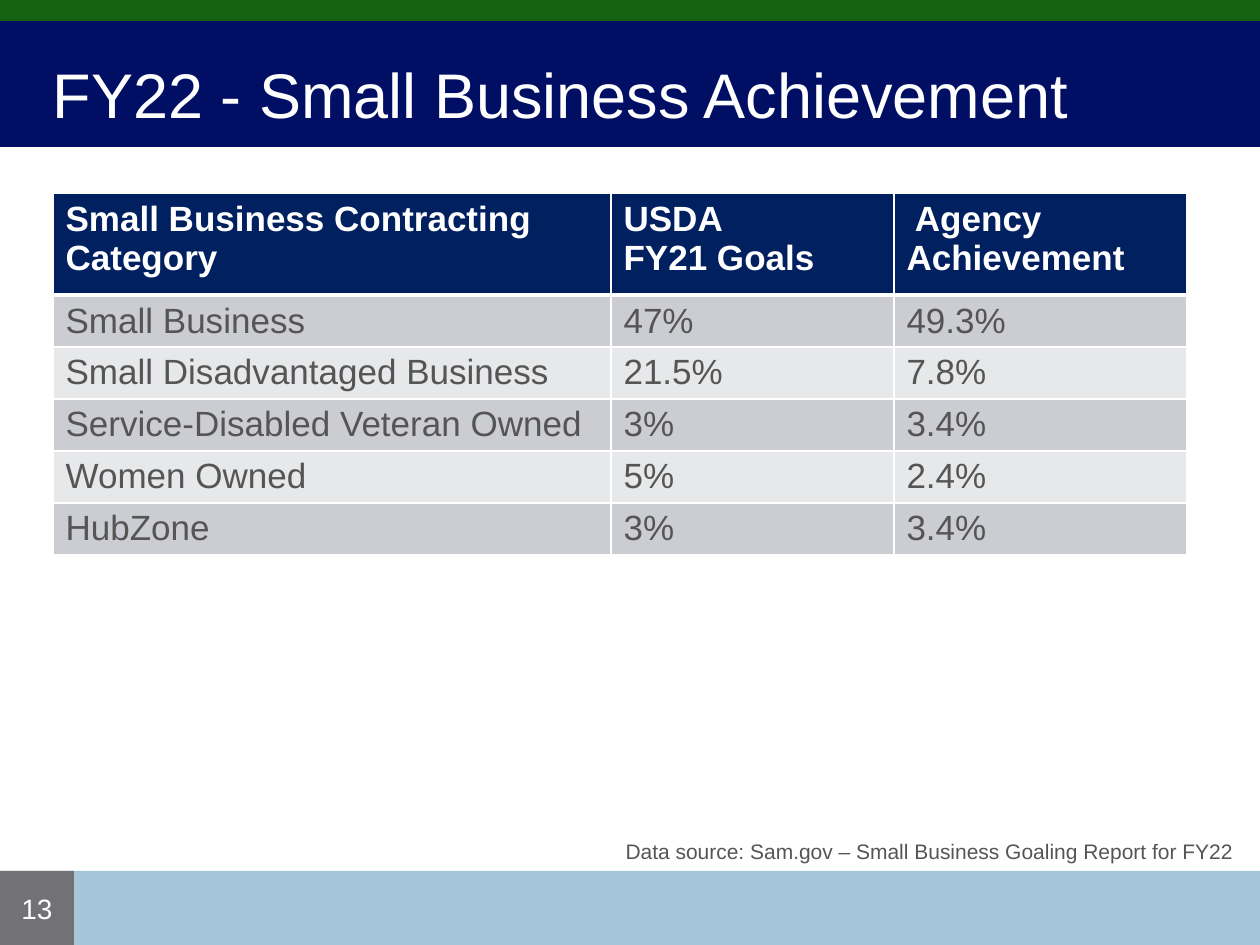
from lxml import etree
from pptx import Presentation, util as u
from pptx.dml.color import RGBColor
from pptx.enum import shapes, text
from pptx.oxml.ns import qn

# Content
TITLE = "FY22 - Small Business Achievement"
HEADER = ["Small Business Contracting Category", "USDA\nFY21 Goals", " Agency Achievement"]
ROWS = [
    ("Small Business", "47%", "49.3%"),
    ("Small Disadvantaged Business", "21.5%", "7.8%"),
    ("Service-Disabled Veteran Owned", "3%", "3.4%"),
    ("Women Owned", "5%", "2.4%"),
    ("HubZone", "3%", "3.4%"),
]
SOURCE = "Data source: Sam.gov – Small Business Goaling Report for FY22"
PAGE = "13"

# Style and layout, lengths in px
COLORS = {
    "navy": "000F64", "sky": "A5C5DA", "green": "156312", "gray": "727176",
    "header": "002060", "odd": "CCCDD2", "even": "E7E8EA",
    "white": "FFFFFF", "body": "555555", "source": "545555",
}
FONT = "Arial"
W, H = 1260, 945
FOOTER_H = 74
FOOTER_Y = H - FOOTER_H
BANDS = [
    ("navy", 0, 0, W, 147),
    ("sky", 0, FOOTER_Y, W, FOOTER_H),
    ("green", 0, 0, W, 21),
]
TABLE_X, TABLE_Y = 53, 193
COL_W = [558, 283, 293]
HEADER_H, ROW_H = 102, 52


def px(n):
    return u.Emu(round(n * 914400 / 126))


def box(*lengths):
    return [px(n) for n in lengths]


def rgb(name):
    return RGBColor.from_string(COLORS[name])


def style(tf, size, color, bold=False, align=None):
    for p in tf.paragraphs:
        p.alignment = align
        for r in p.runs:
            r.font.name, r.font.size, r.font.bold = FONT, u.Pt(size), bold
            r.font.color.rgb = rgb(color)


def add_rect(s, color, *lengths):
    sp = s.shapes.add_shape(shapes.MSO_SHAPE.RECTANGLE, *box(*lengths))
    sp.shadow.inherit = False
    sp.fill.solid()
    sp.fill.fore_color.rgb = rgb(color)
    sp.line.fill.background()
    return sp


def set_borders(cell, top, bottom):
    tcPr = cell._tc.get_or_add_tcPr()
    widths = {"lnL": 1, "lnR": 1, "lnT": top, "lnB": bottom}
    for i, (side, width) in enumerate(widths.items()):
        ln = etree.Element(qn("a:" + side), w=str(u.Pt(width)))
        fill = etree.SubElement(ln, qn("a:solidFill"))
        etree.SubElement(fill, qn("a:srgbClr"), val=COLORS["white"])
        tcPr.insert(i, ln)


prs = Presentation()
prs.slide_width, prs.slide_height = box(W, H)
s = prs.slides.add_slide(prs.slide_layouts[5])

# Bands
for band in BANDS:
    add_rect(s, *band)

# Title, brought in front of the bands
title = s.shapes.title
title.element.getparent().append(title.element)
title.left, title.top, title.width, title.height = box(TABLE_X, 30, 1144, 126)
tf = title.text_frame
tf.text = TITLE
tf.margin_left = tf.margin_right = 0
tf.vertical_anchor = text.MSO_ANCHOR.MIDDLE
style(tf, 36, "white", align=text.PP_ALIGN.LEFT)

# Table
data = [HEADER, *ROWS]
table = s.shapes.add_table(
    len(data), len(COL_W),
    *box(TABLE_X, TABLE_Y, sum(COL_W), HEADER_H + ROW_H * len(ROWS))).table
for col, width in zip(table.columns, COL_W):
    col.width = px(width)
for i, values in enumerate(data):
    table.rows[i].height = px(ROW_H if i else HEADER_H)
    fill = "header" if i == 0 else "odd" if i % 2 else "even"
    for j, value in enumerate(values):
        cell = table.cell(i, j)
        cell.text = value
        cell.fill.solid()
        cell.fill.fore_color.rgb = rgb(fill)
        set_borders(cell, top=3 if i == 1 else 1, bottom=1 if i else 3)
        style(cell.text_frame, 20, "body" if i else "white", bold=i == 0)

# Page number
sp = add_rect(s, "gray", 0, FOOTER_Y, FOOTER_H, FOOTER_H)
sp.text_frame.text = PAGE
sp.text_frame.vertical_anchor = text.MSO_ANCHOR.MIDDLE
style(sp.text_frame, 16, "white", align=text.PP_ALIGN.CENTER)

# Data source
tf = s.shapes.add_textbox(*box(181, 832, 1065, 38)).text_frame
tf.word_wrap = True
tf.text = SOURCE
style(tf, 12, "source", align=text.PP_ALIGN.RIGHT)

prs.save("out.pptx")
